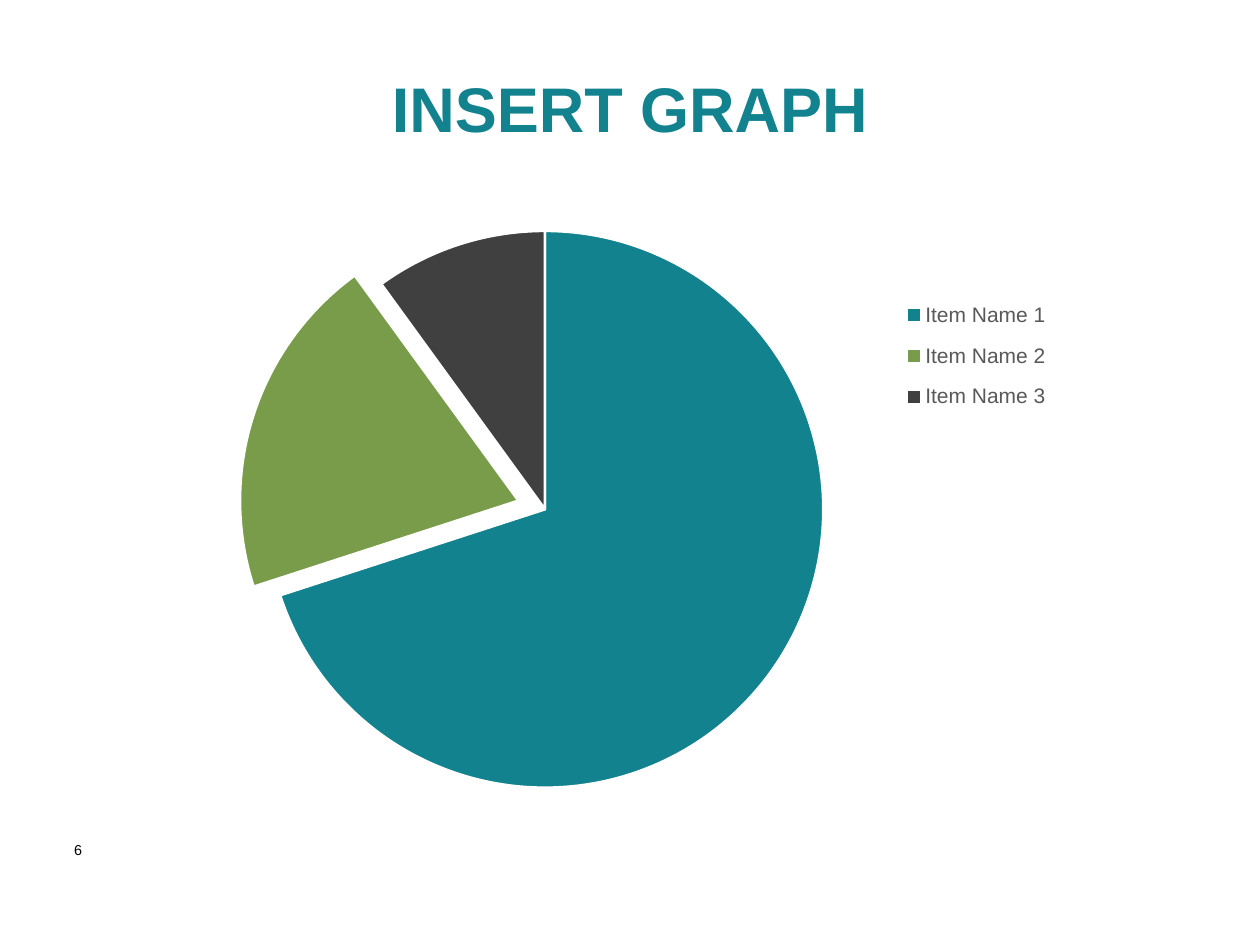
from lxml import etree
from pptx import Presentation
from pptx.chart.data import CategoryChartData
from pptx.dml.color import RGBColor
from pptx.enum.chart import XL_CHART_TYPE, XL_LEGEND_POSITION
from pptx.enum.text import MSO_ANCHOR, PP_ALIGN
from pptx.oxml.ns import qn
from pptx.util import Inches, Pt

PIE = XL_CHART_TYPE.PIE
BOTTOM = XL_LEGEND_POSITION.BOTTOM
TOP, MIDDLE = MSO_ANCHOR.TOP, MSO_ANCHOR.MIDDLE
LEFT, CENTER = PP_ALIGN.LEFT, PP_ALIGN.CENTER
FONT = "Arial"
TEAL = "12828E"
ITEMS = [("Item Name 1", 70, TEAL), ("Item Name 2", 20, "789C49"), ("Item Name 3", 10, "404041")]


def rgb(value):
    return RGBColor.from_string(value)


def style(font, size, color, bold=False):
    font.name, font.size, font.bold = FONT, Pt(size), bold
    font.color.rgb = rgb(color)


def add_text(slide, box, text, size, color, bold=False, align=LEFT, anchor=TOP):
    tf = slide.shapes.add_textbox(*map(Inches, box)).text_frame
    tf.word_wrap = True
    tf.vertical_anchor = anchor
    p = tf.paragraphs[0]
    p.alignment = align
    r = p.add_run()
    r.text = text
    style(r.font, size, color, bold)


def set_layout(parent, before, x, y, w, h, inner=False):
    for old in parent.findall(qn("c:layout")):
        parent.remove(old)
    layout = etree.Element(qn("c:layout"))
    manual = etree.SubElement(layout, qn("c:manualLayout"))
    settings = [("layoutTarget", "inner")] if inner else []
    settings += [("xMode", "edge"), ("yMode", "edge"), ("x", x), ("y", y), ("w", w), ("h", h)]
    for tag, value in settings:
        etree.SubElement(manual, qn(f"c:{tag}")).set("val", str(value))
    parent.find(qn(before)).addprevious(layout)


def add_pie(slide, box):
    data = CategoryChartData()
    data.categories = [name for name, _, _ in ITEMS]
    data.add_series("Series 1", [value for _, value, _ in ITEMS])
    chart = slide.shapes.add_chart(PIE, *map(Inches, box), data).chart
    chart.has_title = False
    style(chart.font, 10, "000000")

    plot = chart.plots[0]
    plot.vary_by_categories = True
    for i, (_, _, color) in enumerate(ITEMS):
        fmt = plot.series[0].points[i].format
        fmt.fill.solid()
        fmt.fill.fore_color.rgb = rgb(color)
        fmt.line.color.rgb = rgb("FFFFFF")
        fmt.line.width = Pt(1.5)
    exploded = plot.series[0].points[1].format.fill._xPr.getparent()
    explosion = etree.Element(qn("c:explosion"))
    explosion.set("val", "10")
    exploded.find(qn("c:spPr")).addprevious(explosion)

    chart.has_legend = True
    legend = chart.legend
    legend.position = BOTTOM
    legend.include_in_layout = False
    style(legend.font, 12, "595959")
    set_layout(legend._element, "c:overlay", 0.8, 0.12, 0.15, 0.22)
    set_layout(plot._element.getparent(), "c:pieChart", 0.25, 0.03, 0.49, 0.88, inner=True)


def main():
    prs = Presentation()
    prs.slide_width, prs.slide_height = Inches(10), Inches(7.5)
    slide = prs.slides.add_slide(prs.slide_layouts[6])
    add_text(slide, (0.49, 6.63, 0.43, 0.54), "6", 8.2, "000000")
    add_pie(slide, (-0.14, 1.66, 9.02, 5.07))
    add_text(slide, (1.86, 0.52, 6.28, 0.67), "INSERT GRAPH", 36, TEAL, True, CENTER, MIDDLE)
    prs.save("out.pptx")


if __name__ == "__main__":
    main()
